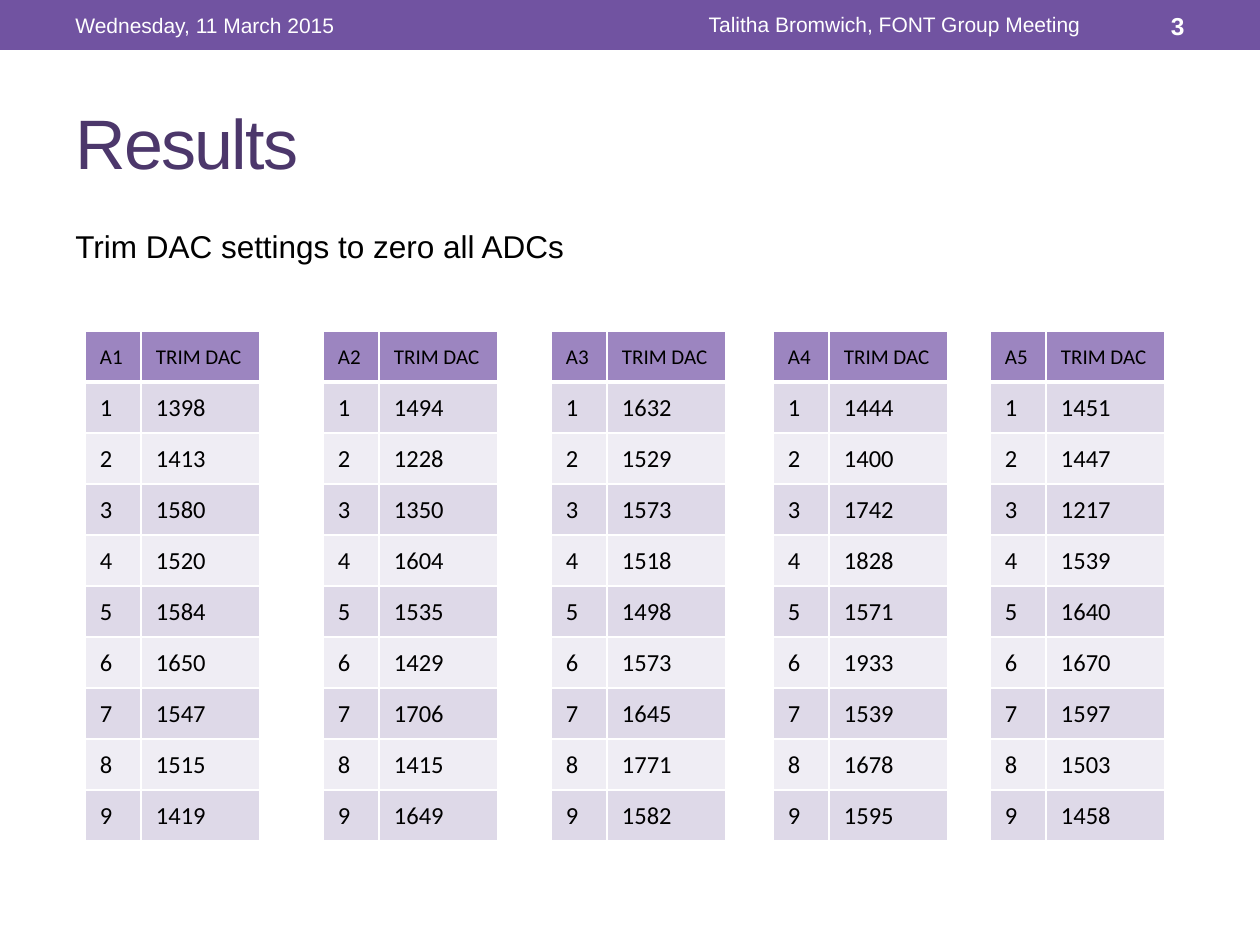
from lxml import etree
from pptx import Presentation
from pptx import util as u
from pptx.dml import color
from pptx.enum import shapes, text
from pptx.oxml import ns

SCALE = 914400 / 126
ROW, COLS = 51, (56, 119)
TRIMS = [
    ("A1", 85, (1398, 1413, 1580, 1520, 1584, 1650, 1547, 1515, 1419)),
    ("A2", 323, (1494, 1228, 1350, 1604, 1535, 1429, 1706, 1415, 1649)),
    ("A3", 551, (1632, 1529, 1573, 1518, 1498, 1573, 1645, 1771, 1582)),
    ("A4", 773, (1444, 1400, 1742, 1828, 1571, 1933, 1539, 1678, 1595)),
    ("A5", 990, (1451, 1447, 1217, 1539, 1640, 1670, 1597, 1503, 1458)),
]


def px(n):
    return u.Emu(round(n * SCALE))


def paint(target, shade):
    target.rgb = color.RGBColor.from_string(shade)


def fill(item, shade):
    item.fill.solid()
    paint(item.fill.fore_color, shade)


def add_run(para, words, size, face, shade, bold=False):
    run = para.add_run()
    run.text = words
    font = run.font
    font.size, font.name, font.bold = u.Pt(size), face, bold
    paint(font.color, shade)
    return run


def label(slide, box, words, size, shade, align="LEFT", anchor="MIDDLE", bold=False):
    frame = slide.shapes.add_textbox(*map(px, box)).text_frame
    frame.word_wrap = True
    frame.vertical_anchor = getattr(text.MSO_ANCHOR, anchor)
    para = frame.paragraphs[0]
    para.alignment = getattr(text.PP_ALIGN, align)
    return add_run(para, words, size, "Arial", shade, bold)


def banner(slide, box):
    x, y, w, h = box
    bar = slide.shapes.add_shape(shapes.MSO_SHAPE.RECTANGLE, *map(px, box))
    bar.shadow.inherit = False
    fill(bar, "7153A1")
    bar.line.fill.background()
    label(slide, (x + 63, y + 3, 400, h - 5), "Wednesday, 11 March 2015", 12, "FFFFFF")
    label(slide, (x + 473, y, 620, h - 2), "Talitha Bromwich, FONT Group Meeting",
          12, "FFFFFF", "RIGHT")
    label(slide, (x + w - 151, y + 3, 88, h - 5), "3", 14, "FFFFFF", "RIGHT", bold=True)


def heading(slide, box):
    x, y, w, h = box
    title = label(slide, (x, y, w, 136), "Results", 40, "4C376B")
    title.font._element.set("spc", "-100")
    label(slide, (x, y + 148, w, h - 148), "Trim DAC settings to zero all ADCs",
          18, "000000", anchor="TOP")


def edge(cell, side, width):
    props = cell._tc.get_or_add_tcPr()
    line = etree.SubElement(props, ns.qn(f"a:ln{side}"), w=str(u.Pt(width)))
    solid = etree.SubElement(line, ns.qn("a:solidFill"))
    etree.SubElement(solid, ns.qn("a:srgbClr"), val="FFFFFF")


def set_cell(cell, words, row):
    cell.margin_left, cell.margin_right = px(15), px(1)
    cell.margin_top, cell.margin_bottom = px(1), 0
    cell.vertical_anchor = text.MSO_ANCHOR.MIDDLE
    for side in "LRTB":
        thick = (row, side) in ((0, "B"), (1, "T"))
        edge(cell, side, 3 if thick else 1)
    fill(cell, ("DED9E8" if row % 2 else "EFEDF4") if row else "9C85C0")
    add_run(cell.text_frame.paragraphs[0], words, 14 if row else 12, "Calibri", "000000")


def trim_table(slide, box, name, values):
    rows = [(name, "TRIM DAC"), *enumerate(values, 1)]
    table = slide.shapes.add_table(len(rows), len(COLS), *map(px, box)).table
    table.horz_banding = False
    for col, width in zip(table.columns, COLS):
        col.width = px(width)
    for r, pair in enumerate(rows):
        table.rows[r].height = px(ROW)
        for c, item in enumerate(pair):
            set_cell(table.cell(r, c), str(item), r)


def main():
    deck = Presentation()
    deck.slide_width, deck.slide_height = px(1260), px(945)
    slide = deck.slides.add_slide(deck.slide_layouts[6])
    banner(slide, (0, 0, 1260, 50))
    heading(slide, (63, 73, 1134, 819))
    for name, left, values in TRIMS:
        box = (left, 331, sum(COLS), ROW * (len(values) + 1))
        trim_table(slide, box, name, values)
    deck.save("out.pptx")


if __name__ == "__main__":
    main()
